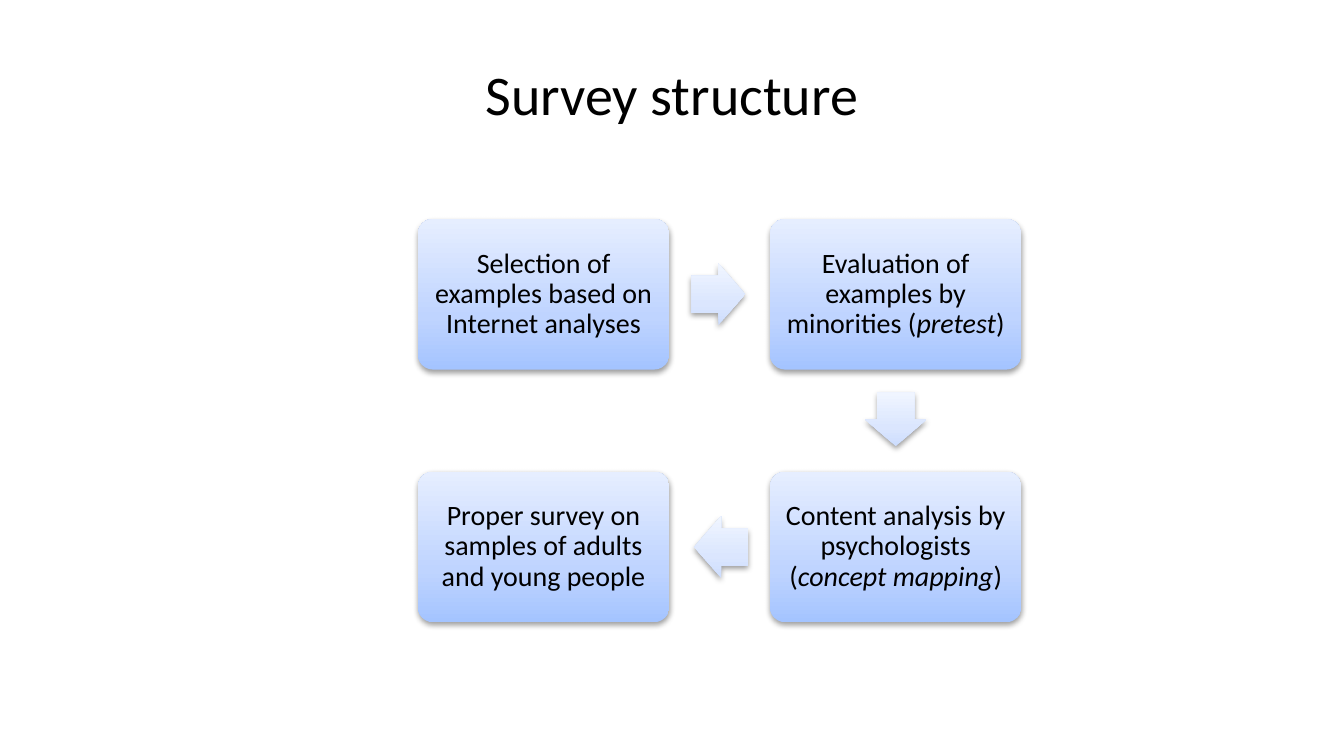
from dataclasses import dataclass
from math import atan2, cos, degrees, radians, sin

from lxml.etree import SubElement
from pptx import Presentation
from pptx.dml.color import RGBColor
from pptx.enum.shapes import MSO_SHAPE
from pptx.enum.text import MSO_ANCHOR, PP_ALIGN
from pptx.oxml import parse_xml
from pptx.oxml.ns import nsdecls, qn
from pptx.util import Inches, Pt


@dataclass(frozen=True)
class Theme:
    font: str = "Calibri"
    ink: str = "000000"
    head: int = 30
    body: int = 15
    box: tuple = ("A4C4FF", "BFD4FF", "E6EEFF")
    arrow: tuple = ("CDDDFE", "DBE6FE", "F0F5FF")


@dataclass(frozen=True)
class Grid:
    left: float = 3.11
    top: float = 1.63
    wide: float = 1.87
    high: float = 1.12
    step_x: float = 2.62
    step_y: float = 1.88

    def place(self, col, row):
        return self.left + col * self.step_x, self.top + row * self.step_y

    def mid(self, col, row):
        x, y = self.place(col, row)
        return x + self.wide / 2, y + self.high / 2


THEME = Theme()
GRID = Grid()
SIZE = (10, 10 * 9 / 16)
ARROW = (0.4, 0.46)
LAG = 0.01

# Column, row and text; every second text part is italic.
STEPS = [
    (0, 0, ["Selection of examples based on Internet analyses"]),
    (1, 0, ["Evaluation of examples by minorities (", "pretest", ")"]),
    (1, 1, ["Content analysis by psychologists (", "concept mapping", ")"]),
    (0, 1, ["Proper survey on samples of adults and young people"]),
]


def apply(item, form):
    for name, value in form.items():
        setattr(item, name, value)


def shade(shape, tints):
    """Give a shape a vertical gradient that stays upright, and a soft shadow."""
    apply(shape.shadow, {"inherit": False})
    shape.line.fill.background()
    shape.fill.gradient()
    props = shape.element.spPr
    stops = "".join(
        f'<a:gs pos="{pos * 1000}"><a:srgbClr val="{tint}"/></a:gs>'
        for pos, tint in zip((0, 35, 100), tints)
    )
    fill = parse_xml(
        f'<a:gradFill {nsdecls("a")} rotWithShape="0"><a:gsLst>{stops}</a:gsLst>'
        '<a:lin ang="16200000" scaled="0"/></a:gradFill>'
    )
    props.replace(props.find(qn("a:gradFill")), fill)
    cast = SubElement(
        props.find(qn("a:effectLst")), qn("a:outerShdw"),
        blurRad=str(Pt(3.1)), dist=str(Pt(1.6)), dir="5400000", rotWithShape="0",
    )
    tone = SubElement(cast, qn("a:srgbClr"), val=THEME.ink)
    SubElement(tone, qn("a:alpha"), val="38000")


def write(shape, parts, size, inset, space):
    frame = shape.text_frame
    apply(frame, {"word_wrap": True, "vertical_anchor": MSO_ANCHOR.MIDDLE})
    apply(frame, {f"margin_{side}": Inches(inset)
                  for side in ("left", "right", "top", "bottom")})
    para = frame.paragraphs[0]
    apply(para, {"alignment": PP_ALIGN.CENTER, "line_spacing": space})
    for i, part in enumerate(parts):
        run = para.add_run()
        run.text = part
        apply(run.font, {"name": THEME.font, "size": Pt(size),
                         "italic": i % 2 == 1})
        run.font.color.rgb = RGBColor.from_string(THEME.ink)


def add_title(slide, text):
    wide, high = SIZE
    spot = (0.05 * wide, 0.04 * high, 0.9 * wide, high / 6)
    box = slide.shapes.add_textbox(*map(Inches, spot))
    write(box, [text], THEME.head, 0.05, 1.0)


def add_step(slide, col, row, parts):
    spot = (*GRID.place(col, row), GRID.wide, GRID.high)
    box = slide.shapes.add_shape(MSO_SHAPE.ROUNDED_RECTANGLE,
                                 *map(Inches, spot))
    box.adjustments[0] = 0.1
    shade(box, THEME.box)
    write(box, parts, THEME.body, 0.06, 0.9)


def add_arrow(slide, start, end):
    """Point from one step to the next, just short of halfway."""
    (ax, ay), (bx, by) = GRID.mid(*start), GRID.mid(*end)
    turn = degrees(atan2(by - ay, bx - ax))
    wide, high = ARROW
    x = (ax + bx) / 2 - LAG * cos(radians(turn)) - wide / 2
    y = (ay + by) / 2 - LAG * sin(radians(turn)) - high / 2
    arrow = slide.shapes.add_shape(MSO_SHAPE.RIGHT_ARROW,
                                   *map(Inches, (x, y, wide, high)))
    arrow.adjustments[0] = 0.6
    arrow.adjustments[1] = 0.5
    arrow.rotation = turn
    shade(arrow, THEME.arrow)


def main():
    deck = Presentation()
    apply(deck, {"slide_width": Inches(SIZE[0]),
                 "slide_height": Inches(SIZE[1])})
    slide = deck.slides.add_slide(deck.slide_layouts[6])
    add_title(slide, "Survey structure")
    for step in STEPS:
        add_step(slide, *step)
    for step, after in zip(STEPS, STEPS[1:]):
        add_arrow(slide, step[:2], after[:2])
    deck.save("out.pptx")


if __name__ == "__main__":
    main()
